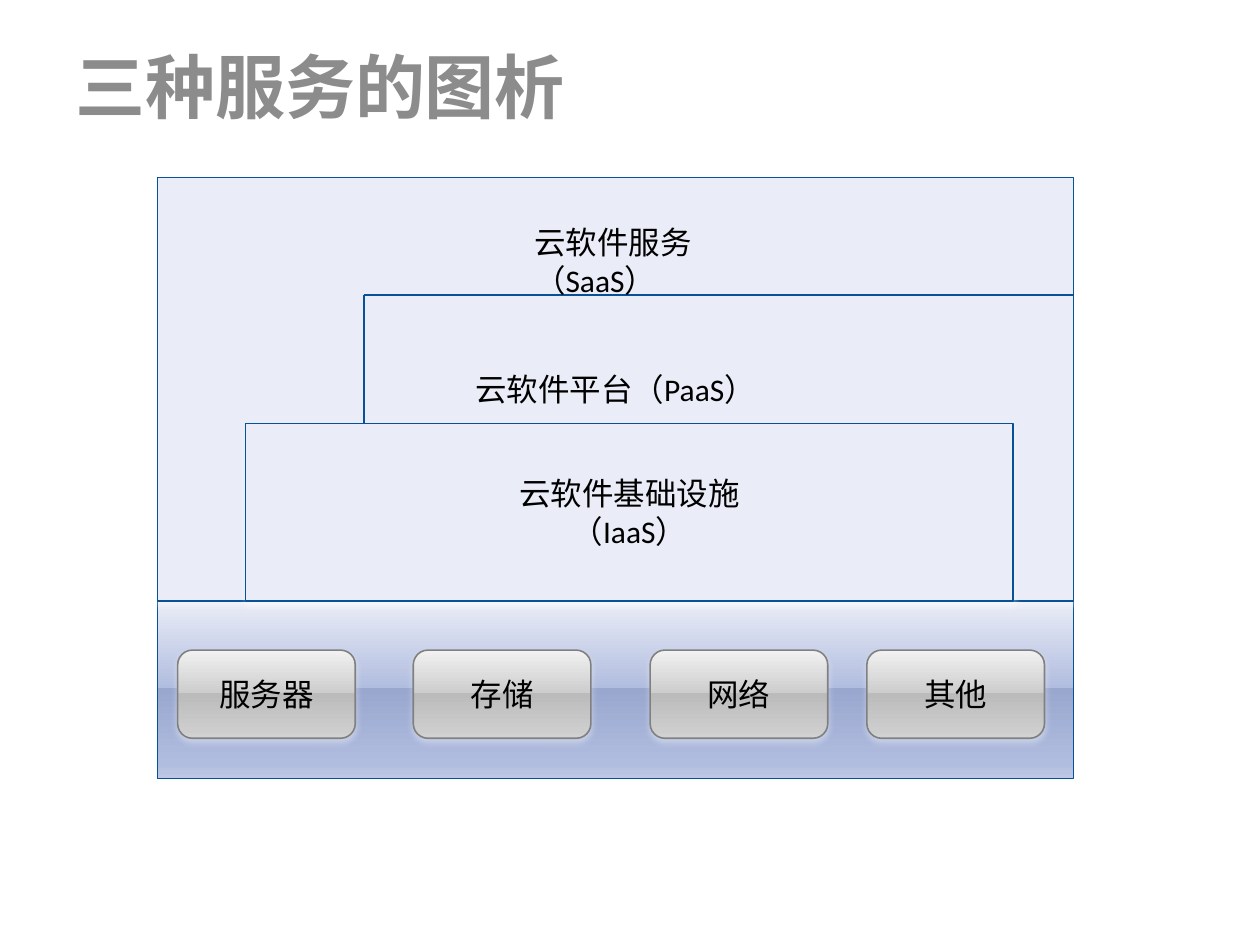
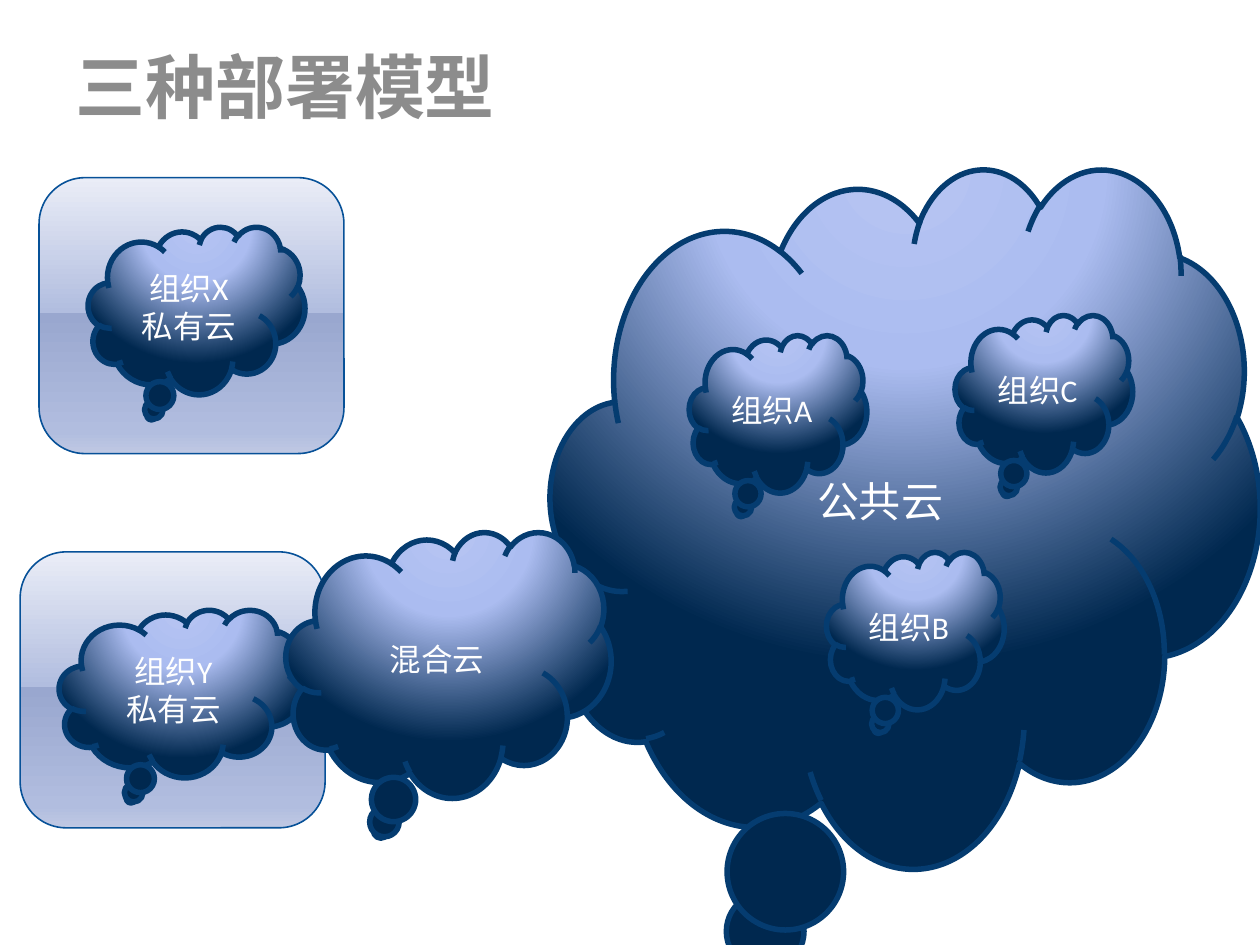
from lxml import etree
from pptx import Presentation
from pptx.dml.color import RGBColor
from pptx.enum.shapes import MSO_CONNECTOR, MSO_SHAPE
from pptx.enum.text import MSO_ANCHOR, PP_ALIGN
from pptx.oxml import parse_xml
from pptx.oxml.ns import nsdecls, qn
from pptx.util import Inches, Pt

FONT = "Calibri"
BLACK = RGBColor(0x00, 0x00, 0x00)
WHITE = RGBColor(0xFF, 0xFF, 0xFF)
TITLE_GRAY = RGBColor(0x8C, 0x8C, 0x8C)
PALE_BLUE = RGBColor(0xEA, 0xED, 0xF7)
MID_BLUE = RGBColor(0xB1, 0xBD, 0xDF)
BLUE_LINE = RGBColor(0x07, 0x51, 0x98)
GRAY_LINE = RGBColor(0x80, 0x80, 0x80)
LIGHT_GRAY = RGBColor(0xCD, 0xCD, 0xCD)
CLOUD_LINE = RGBColor(0x05, 0x3C, 0x70)

# Gradients: (position in percent, colour)
BLUE_GLASS = [(0, PALE_BLUE), (49, MID_BLUE), (49, RGBColor(0x99, 0xA7, 0xCF)),
              (92, MID_BLUE), (100, RGBColor(0xBF, 0xC8, 0xE3))]
GRAY_GLASS = [(0, RGBColor(0xF1, 0xF1, 0xF1)), (49, LIGHT_GRAY),
              (49, RGBColor(0xBB, 0xBB, 0xBB)), (92, LIGHT_GRAY),
              (100, RGBColor(0xD5, 0xD5, 0xD5))]
CLOUD_GLOW = [(0, RGBColor(0xB7, 0xC5, 0xF3)), (40, RGBColor(0xAB, 0xBC, 0xF0)),
              (100, RGBColor(0x00, 0x28, 0x4F))]
DOWNWARD = '<a:lin ang="5400000" scaled="0"/>'
FROM_ABOVE = ('<a:path path="circle"><a:fillToRect l="50000" t="-80000" '
              'r="50000" b="180000"/></a:path>')


def set_gradient(shape, stops, direction):
    shape.fill.background()
    stop_xml = "".join(
        f'<a:gs pos="{position * 1000}"><a:srgbClr val="{color}"/></a:gs>'
        for position, color in stops)
    gradient = parse_xml(f'<a:gradFill {nsdecls("a")} rotWithShape="1">'
                         f'<a:gsLst>{stop_xml}</a:gsLst>{direction}</a:gradFill>')
    properties = shape._element.spPr
    properties.replace(properties.find(qn("a:noFill")), gradient)


def add_halo(shape):
    effects = shape._element.spPr.find(qn("a:effectLst"))
    effects.append(parse_xml(
        f'<a:outerShdw {nsdecls("a")} blurRad="{Pt(4)}" dist="{Pt(2)}" dir="5400000" '
        f'rotWithShape="0"><a:srgbClr val="{WHITE}"><a:alpha val="38000"/>'
        '</a:srgbClr></a:outerShdw>'))


def write(shape, lines, size, color, align=PP_ALIGN.CENTER,
          anchor=MSO_ANCHOR.MIDDLE, bold=False):
    frame = shape.text_frame
    frame.word_wrap = True
    frame.vertical_anchor = anchor
    for index, line in enumerate(lines):
        paragraph = frame.add_paragraph() if index else frame.paragraphs[0]
        paragraph.text = line
        paragraph.alignment = align
        paragraph.font.name = FONT
        paragraph.font.size = Pt(size)
        paragraph.font.bold = bold
        paragraph.font.color.rgb = color


def add_text(slide, box, lines, size, color, bold=False):
    text_box = slide.shapes.add_textbox(*map(Inches, box))
    write(text_box, lines, size, color, PP_ALIGN.LEFT, MSO_ANCHOR.TOP, bold)


def add_panel(slide, kind, box, gradient=None, line=BLUE_LINE, lines=()):
    """Outlined panel with a halo; plain pale blue unless a gradient is given."""
    panel = slide.shapes.add_shape(kind, *map(Inches, box))
    if gradient:
        set_gradient(panel, gradient, DOWNWARD)
    else:
        panel.fill.solid()
        panel.fill.fore_color.rgb = PALE_BLUE
    panel.line.color.rgb = line
    panel.line.width = Pt(0.9)
    panel.shadow.inherit = False
    add_halo(panel)
    write(panel, lines, 18, BLACK)


def add_cloud(slide, box, lines, size=18):
    cloud = slide.shapes.add_shape(MSO_SHAPE.CLOUD_CALLOUT, *map(Inches, box))
    set_gradient(cloud, CLOUD_GLOW, FROM_ABOVE)
    cloud.line.color.rgb = CLOUD_LINE
    cloud.line.width = Pt(3.15)
    cloud.shadow.inherit = False
    write(cloud, lines, size, WHITE)


def add_edge(slide, start, end):
    edge = slide.shapes.add_connector(MSO_CONNECTOR.STRAIGHT,
                                      *map(Inches, (*start, *end)))
    edge.line.color.rgb = BLUE_LINE
    edge.line.width = Pt(0.9)
    etree.SubElement(edge._element.spPr, qn("a:effectLst"))


def add_titled_slide(presentation, title):
    slide = presentation.slides.add_slide(presentation.slide_layouts[6])
    add_text(slide, (0.5, 0.3, 9, 1.25), [title], 40, TITLE_GRAY, bold=True)
    return slide


def add_hardware_band(slide, left, top, width, height):
    add_panel(slide, MSO_SHAPE.RECTANGLE, (left, top, width, height), BLUE_GLASS)
    resources = {"服务器": 0.16, "存储": 2.03, "网络": 3.91, "其他": 5.63}
    for name, offset in resources.items():
        add_panel(slide, MSO_SHAPE.ROUNDED_RECTANGLE,
                  (left + offset, top + 0.39, 1.41, 0.7),
                  GRAY_GLASS, GRAY_LINE, [name])


def add_service_layers(slide, left, top, width, height):
    infrastructure_height = 1.41
    infrastructure_top = top + height - infrastructure_height
    add_panel(slide, MSO_SHAPE.RECTANGLE, (left, top, width, height),
              lines=["云软件平台（PaaS）"])
    add_panel(slide, MSO_SHAPE.RECTANGLE,
              (left + 0.7, infrastructure_top, 6.09, infrastructure_height),
              lines=["云软件基础设施", "（IaaS）"])
    # Stepped border between platform and software
    corner = (left + 1.64, top + 0.93)
    add_edge(slide, corner, (corner[0], infrastructure_top))
    add_edge(slide, corner, (left + width, corner[1]))
    add_text(slide, (left + 2.89, top + 0.31, 2.4, 0.4),
             ["云软件服务（SaaS）"], 18, BLACK)


def add_private_cloud(slide, left, top, cloud_box, organisation):
    add_panel(slide, MSO_SHAPE.ROUNDED_RECTANGLE, (left, top, 2.42, 2.19), BLUE_GLASS)
    offset_x, offset_y, width, height = cloud_box
    add_cloud(slide, (left + offset_x, top + offset_y, width, height),
              [organisation, "私有云"])


def add_public_cloud(slide, left, top, width, height):
    add_cloud(slide, (left, top, width, height), ["公共云"], size=24)
    members = {"组织A": (1.1, 1.33), "组织C": (3.21, 1.17), "组织B": (2.19, 3.05)}
    for name, (offset_x, offset_y) in members.items():
        add_cloud(slide, (left + offset_x, top + offset_y, 1.41, 1.25), [name])


def main():
    presentation = Presentation()
    presentation.slide_width = Inches(10)
    presentation.slide_height = Inches(7.5)

    # Service layers
    services = add_titled_slide(presentation, "三种服务的图析")
    add_hardware_band(services, 1.25, 4.77, 7.27, 1.41)
    add_service_layers(services, 1.25, 1.41, 7.27, 3.36)

    # Deployment models
    deployment = add_titled_slide(presentation, "三种部署模型")
    add_private_cloud(deployment, 0.31, 1.41, (0.39, 0.39, 1.72, 1.33), "组织X")
    add_private_cloud(deployment, 0.16, 4.38, (0.31, 0.46, 1.95, 1.33), "组织Y")
    add_public_cloud(deployment, 4.37, 1.33, 5.63, 5.55)
    add_cloud(deployment, (2.27, 4.22, 2.58, 2.11), ["混合云"])

    presentation.save("out.pptx")


if __name__ == "__main__":
    main()
